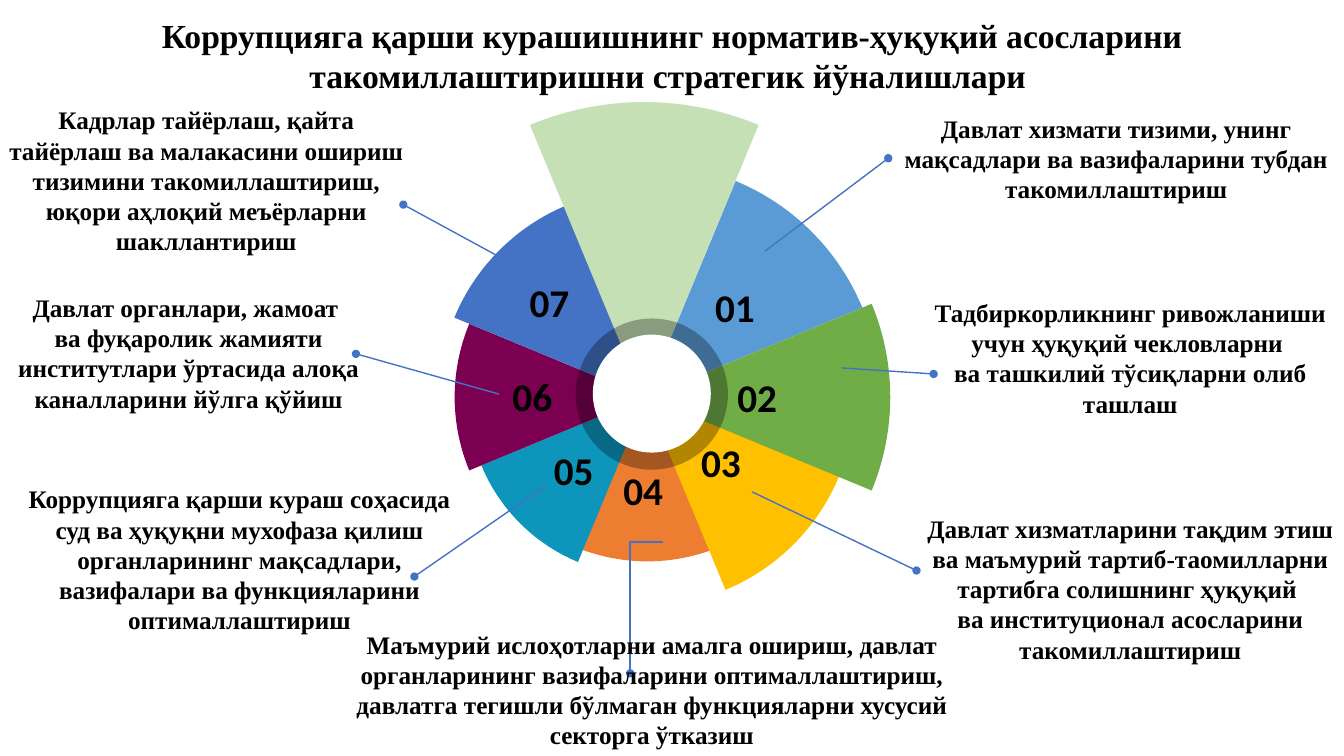
import math

from lxml import etree
from pptx import Presentation
from pptx import util as u
from pptx.dml.color import RGBColor
from pptx.enum import shapes, text
from pptx.oxml.ns import qn

SCALE = 9144  # EMU in one px, at 100 px to the inch
COLOURS = {
    "black": "000000", "white": "FFFFFF", "callout": "4472C4",
    "sky": "5B9BD5", "green": "70AD47", "gold": "FFC000", "orange": "ED7D31",
    "teal": "0D95BC", "plum": "7B0051", "blue": "4472C4", "mint": "C5E0B4",
}
ARC_STEPS = 24
SECTOR_ANGLE = 45
FIRST_ANGLE = -67.5  # clockwise from the right, where sector 01 begins

# place in the clockwise order, colour, apex x, apex y, radius
SECTORS = [
    (3, "orange", 642, 371, 186),
    (4, "teal", 641, 394, 177),
    (5, "plum", 641, 394, 190),
    (6, "blue", 641, 394, 206),
    (7, "mint", 639, 396, 294),
    (0, "sky", 641, 394, 232),
    (2, "gold", 640, 393, 208),
    (1, "green", 641, 394, 242),
]

# left, top, width
NUMBERS = [(696, 276, 66), (718, 365, 66), (679, 430, 72), (605, 457, 66),
           (536, 438, 66), (495, 364, 66), (512, 271, 66)]

# from x, from y, to x, to y
CALLOUT_LINES = [
    (746, 488, 909, 566), (835, 365, 926, 371), (525, 271, 400, 203),
    (495, 391, 353, 351), (541, 482, 411, 572), (759, 249, 881, 157),
]

TITLE = ("Коррупцияга қарши курашишнинг норматив-ҳуқуқий асосларини "
         "такомиллаштиришни стратегик йўналишлари ")

# left, top, width, height, wording
DIRECTIONS = [
    (881, 107, 452, 101,
     "Давлат хизмати тизими, унинг мақсадлари ва вазифаларини тубдан "
     "такомиллаштириш"),
    (895, 290, 452, 131,
     "Тадбиркорликнинг ривожланиши учун ҳуқуқий чекловларни \n"
     "ва ташкилий тўсиқларни олиб ташлаш"),
    (909, 504, 424, 162,
     "Давлат хизматларини тақдим этиш ва маъмурий тартиб-таомилларни "
     "тартибга солишнинг ҳуқуқий \n"
     "ва институционал асосларини такомиллаштириш"),
    (300, 619, 693, 131,
     "Маъмурий ислоҳотларни амалга ошириш, давлат органларининг "
     "вазифаларини оптималлаштириш, давлатга тегишли бўлмаган "
     "функцияларни хусусий секторга ўтказиш"),
    (0, 475, 475, 162,
     "Коррупцияга қарши кураш соҳасида суд ва ҳуқуқни мухофаза қилиш "
     "органларининг мақсадлари, вазифалари ва функцияларини "
     "оптималлаштириш"),
    (3, 285, 368, 131,
     "Давлат органлари, жамоат \n"
     "ва фуқаролик жамияти институтлари ўртасида алоқа каналларини "
     "йўлга қўйиш"),
    (-6, 99, 421, 162,
     "Кадрлар тайёрлаш, қайта тайёрлаш ва малакасини ошириш тизимини "
     "такомиллаштириш, юқори аҳлоқий меъёрларни шакллантириш"),
]


def px(*lengths):
    return [u.Emu(round(length * SCALE)) for length in lengths]


def rgb(colour):
    return RGBColor.from_string(COLOURS[colour])


class Painter:
    """Draws styled elements on one slide."""

    def __init__(self, slide):
        self.shapes = slide.shapes

    def paint(self, shape, colour, outlined=False):
        shape.shadow.inherit = False
        shape.fill.solid()
        shape.fill.fore_color.rgb = rgb(colour)
        if outlined:
            shape.line.color.rgb = rgb(colour)
            shape.line.width = u.Pt(1)
        else:
            shape.line.fill.background()

    def sector(self, place, colour, x, y, radius):
        start = FIRST_ANGLE + SECTOR_ANGLE * place
        arc = []
        for step in range(ARC_STEPS + 1):
            angle = math.radians(start + SECTOR_ANGLE * step / ARC_STEPS)
            arc.append(px(x + radius * math.cos(angle), y + radius * math.sin(angle)))
        builder = self.shapes.build_freeform(*px(x, y), scale=1.0)
        builder.add_line_segments(arc, close=True)
        self.paint(builder.convert_to_shape(), colour, outlined=colour == "mint")

    def disc(self, left, top, width, height, colour, opacity=100):
        disc = self.shapes.add_shape(
            shapes.MSO_SHAPE.OVAL, *px(left, top, width, height))
        self.paint(disc, colour)
        if opacity < 100:
            tint = disc._element.spPr.find(".//" + qn("a:srgbClr"))
            etree.SubElement(tint, qn("a:alpha"), val=str(opacity * 1000))

    def callout(self, *ends, kind=shapes.MSO_CONNECTOR.STRAIGHT):
        """Draw a connector that ends in a dot."""
        connector = self.shapes.add_connector(kind, *px(*ends))
        connector.line.color.rgb = rgb("callout")
        connector.line.width = u.Pt(1)
        properties = connector._element.spPr
        etree.SubElement(properties.find(qn("a:ln")), qn("a:tailEnd"), type="oval")
        etree.SubElement(properties, qn("a:effectLst"))
        return connector

    def bent_callout(self, *ends):
        """Draw an elbow turned by 90 degrees that bends right at its start."""
        properties = self.callout(
            *ends, kind=shapes.MSO_CONNECTOR.ELBOW)._element.spPr
        properties.find(qn("a:xfrm")).set("rot", "5400000")
        adjustments = properties.find(".//" + qn("a:avLst"))
        etree.SubElement(adjustments, qn("a:gd"), name="adj1", fmla="val -300")

    def label(self, left, top, width, height, wording, size,
              font="Times New Roman", anchor=text.MSO_ANCHOR.TOP):
        box = self.shapes.add_textbox(*px(left, top, width, height))
        frame = box.text_frame
        frame.word_wrap = True
        frame.auto_size = text.MSO_AUTO_SIZE.SHAPE_TO_FIT_TEXT
        frame.vertical_anchor = anchor
        para = frame.paragraphs[0]
        para.text = wording
        para.alignment = text.PP_ALIGN.CENTER
        para.font.name = font
        para.font.size = u.Pt(size)
        para.font.bold = True
        para.font.color.rgb = rgb("black")


def main():
    deck = Presentation()
    deck.slide_width, deck.slide_height = px(1333, 750)
    painter = Painter(deck.slides.add_slide(deck.slide_layouts[6]))

    for sector in SECTORS:
        painter.sector(*sector)
    painter.disc(571, 316, 151, 150, "black", opacity=30)
    painter.disc(588, 332, 117, 117, "white")

    for ends in CALLOUT_LINES:
        painter.callout(*ends)
    painter.bent_callout(576, 587, 706, 619)

    for number, (left, top, width) in enumerate(NUMBERS, 1):
        painter.label(left, top, width, 57, f"{number:02}", 28,
                      font="Calibri", anchor=text.MSO_ANCHOR.MIDDLE)
    painter.label(0, 10, 1333, 91, TITLE, 24)
    for *place, wording in DIRECTIONS:
        painter.label(*place, wording, 18)

    deck.save("out.pptx")


if __name__ == "__main__":
    main()
